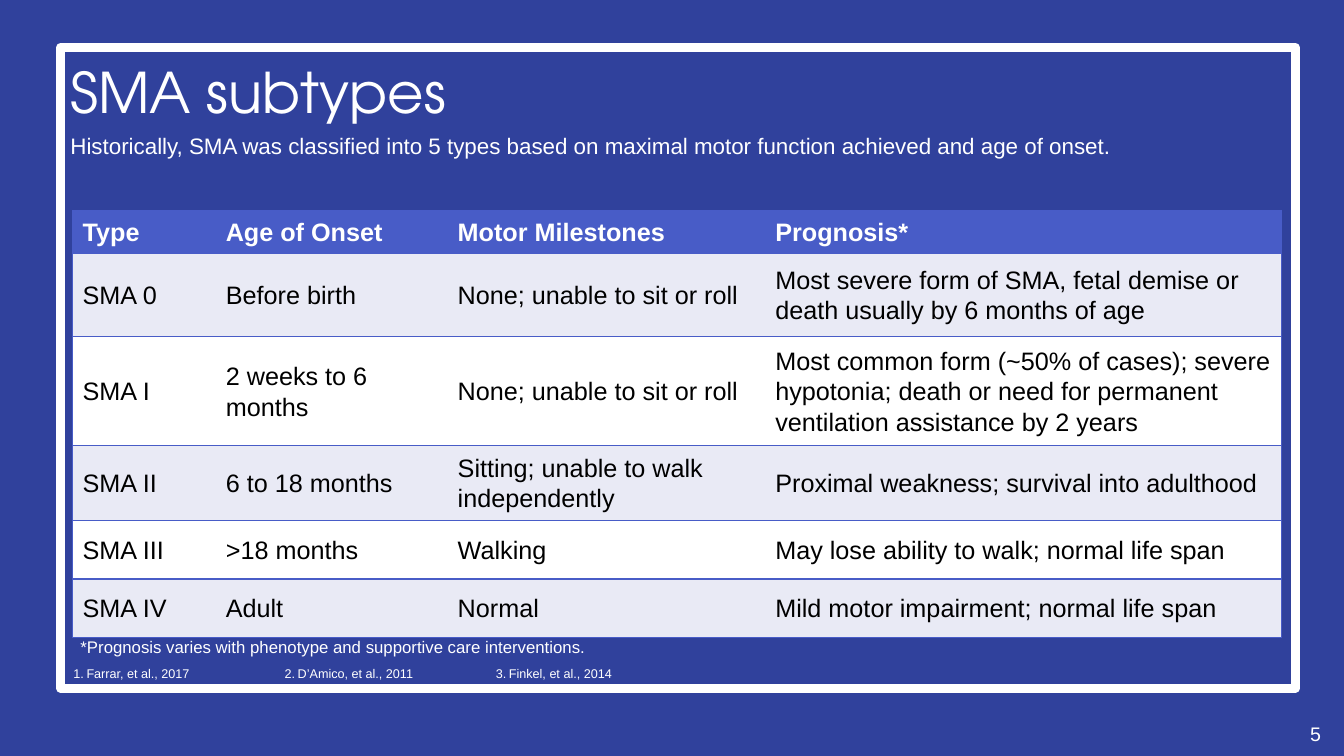
from lxml import etree
from pptx import Presentation
from pptx.dml.color import RGBColor
from pptx.enum.shapes import MSO_SHAPE
from pptx.enum.text import MSO_ANCHOR, MSO_AUTO_SIZE, PP_ALIGN
from pptx.oxml.ns import qn
from pptx.util import Pt

RECT = MSO_SHAPE.RECTANGLE
MIDDLE = MSO_ANCHOR.MIDDLE
NO_FIT = MSO_AUTO_SIZE.NONE
LEFT, RIGHT = PP_ALIGN.LEFT, PP_ALIGN.RIGHT

PX = 9144  # 100 px to the inch
NAVY, BLUE, PALE, WHITE, BLACK = "30419C", "485CC7", "E9EAF5", "FFFFFF", "000000"
BODY_FONT, TITLE_FONT = "Arial", "TeX Gyre Adventor"

COLUMNS = [142, 230, 315, 512]
ROW_HEIGHTS = [40, 83, 108, 72, 58, 58]
SUBTYPES = [
    ["Type", "Age of Onset", "Motor Milestones", "Prognosis*"],
    ["SMA 0", "Before birth", "None; unable to sit or roll",
     "Most severe form of SMA, fetal demise or death usually by 6 months of age"],
    ["SMA I", "2 weeks to 6 months", "None; unable to sit or roll",
     "Most common form (~50% of cases); severe hypotonia; death or need for "
     "permanent ventilation assistance by 2 years"],
    ["SMA II", "6 to 18 months", "Sitting; unable to walk independently",
     "Proximal weakness; survival into adulthood"],
    ["SMA III", ">18 months", "Walking", "May lose ability to walk; normal life span"],
    ["SMA IV", "Adult", "Normal", "Mild motor impairment; normal life span"],
]
REFERENCES = ["Farrar, et al., 2017", "D’Amico, et al., 2011", "Finkel, et al., 2014"]


def px(n):
    return int(n * PX)


def rgb(color):
    return RGBColor.from_string(color)


class Deck:
    def __init__(self, width, height):
        self.prs = Presentation()
        self.prs.slide_width, self.prs.slide_height = px(width), px(height)

    def add_slide(self, background):
        self.s = self.prs.slides.add_slide(self.prs.slide_layouts[5])
        fill = self.s.background.fill
        fill.solid()
        fill.fore_color.rgb = rgb(background)

    def style(self, p, size, color=WHITE, font=BODY_FONT, bold=False):
        for r in p.runs:
            r.font.name, r.font.size, r.font.bold = font, Pt(size), bold
            r.font.color.rgb = rgb(color)

    def frame(self, x, y, w, h, color, weight):
        sp = self.s.shapes.add_shape(RECT, px(x), px(y), px(w), px(h))
        sp.shadow.inherit = False
        sp.fill.background()
        sp.line.color.rgb = rgb(color)
        sp.line.width = Pt(weight)
        etree.SubElement(sp.line._get_or_add_ln(), qn("a:round"))
        self.s.shapes._spTree.insert(2, sp._element)  # behind the title

    def title(self, text, x, y, w, h, size):
        sp = self.s.shapes.title
        sp.left, sp.top, sp.width, sp.height = px(x), px(y), px(w), px(h)
        tf = sp.text_frame
        tf.text = text
        tf.auto_size, tf.vertical_anchor = NO_FIT, MIDDLE
        tf.paragraphs[0].alignment = LEFT
        self.style(tf.paragraphs[0], size, font=TITLE_FONT)

    def text(self, text, x, y, w, h, size, align=LEFT):
        tf = self.s.shapes.add_textbox(px(x), px(y), px(w), px(h)).text_frame
        tf.word_wrap = True
        tf.text = text
        for p in tf.paragraphs:
            p.alignment = align
            self.style(p, size)
        return tf

    def numbered_columns(self, items, x, y, w, h, size, indent):
        tf = self.text("\n".join(items), x, y, w, h, size)
        tf._txBody.bodyPr.set("numCol", str(len(items)))
        for p in tf.paragraphs:
            pPr = p._p.get_or_add_pPr()
            pPr.set("marL", str(px(indent)))
            pPr.set("indent", str(-px(indent)))
            etree.SubElement(pPr, qn("a:buAutoNum"), type="arabicPeriod")

    def border(self, cell, side, color):
        ln = etree.SubElement(cell._tc.get_or_add_tcPr(), qn("a:ln" + side), w=str(Pt(1)))
        if color:
            fill = etree.SubElement(ln, qn("a:solidFill"))
            etree.SubElement(fill, qn("a:srgbClr"), val=color)
        else:
            etree.SubElement(ln, qn("a:noFill"))

    def table(self, rows, x, y, widths, heights, size):
        table = self.s.shapes.add_table(len(rows), len(widths), px(x), px(y),
                                        px(sum(widths)), px(sum(heights))).table
        for column, width in zip(table.columns, widths):
            column.width = px(width)
        for i, (row, height) in enumerate(zip(rows, heights)):
            table.rows[i].height = px(height)
            header = i == 0
            for j, text in enumerate(row):
                cell = table.cell(i, j)
                cell.text = text
                cell.vertical_anchor = MIDDLE
                # Lines between rows and around the table only
                self.border(cell, "L", BLUE if j == 0 else None)
                self.border(cell, "R", BLUE if j == len(row) - 1 else None)
                self.border(cell, "T", BLUE)
                self.border(cell, "B", BLUE)
                cell.fill.solid()
                cell.fill.fore_color.rgb = rgb(BLUE if header else PALE if i % 2 else WHITE)
                p = cell.text_frame.paragraphs[0]
                p.line_spacing = 1.07
                self.style(p, size, WHITE if header else BLACK, bold=header)


def main():
    deck = Deck(1333, 750)
    deck.add_slide(NAVY)

    # Frame, title and introduction
    deck.frame(60, 47, 1225, 636, WHITE, 6)
    deck.title("SMA subtypes", 60, 18, 1225, 145, 40)
    deck.text("Historically, SMA was classified into 5 types based on maximal motor "
              "function achieved and age of onset.", 60, 126, 1225, 40, 16)

    # Subtype table
    deck.table(SUBTYPES, 72, 209, COLUMNS, ROW_HEIGHTS, 18)

    # Footnote, references and page number
    deck.text("*Prognosis varies with phenotype and supportive care interventions.",
              70, 627, 676, 30, 12)
    deck.numbered_columns(REFERENCES, 63, 656, 648, 25, 9, 13)
    deck.text("5", 1013, 711, 307, 24, 14, RIGHT)

    deck.prs.save("out.pptx")


if __name__ == "__main__":
    main()
